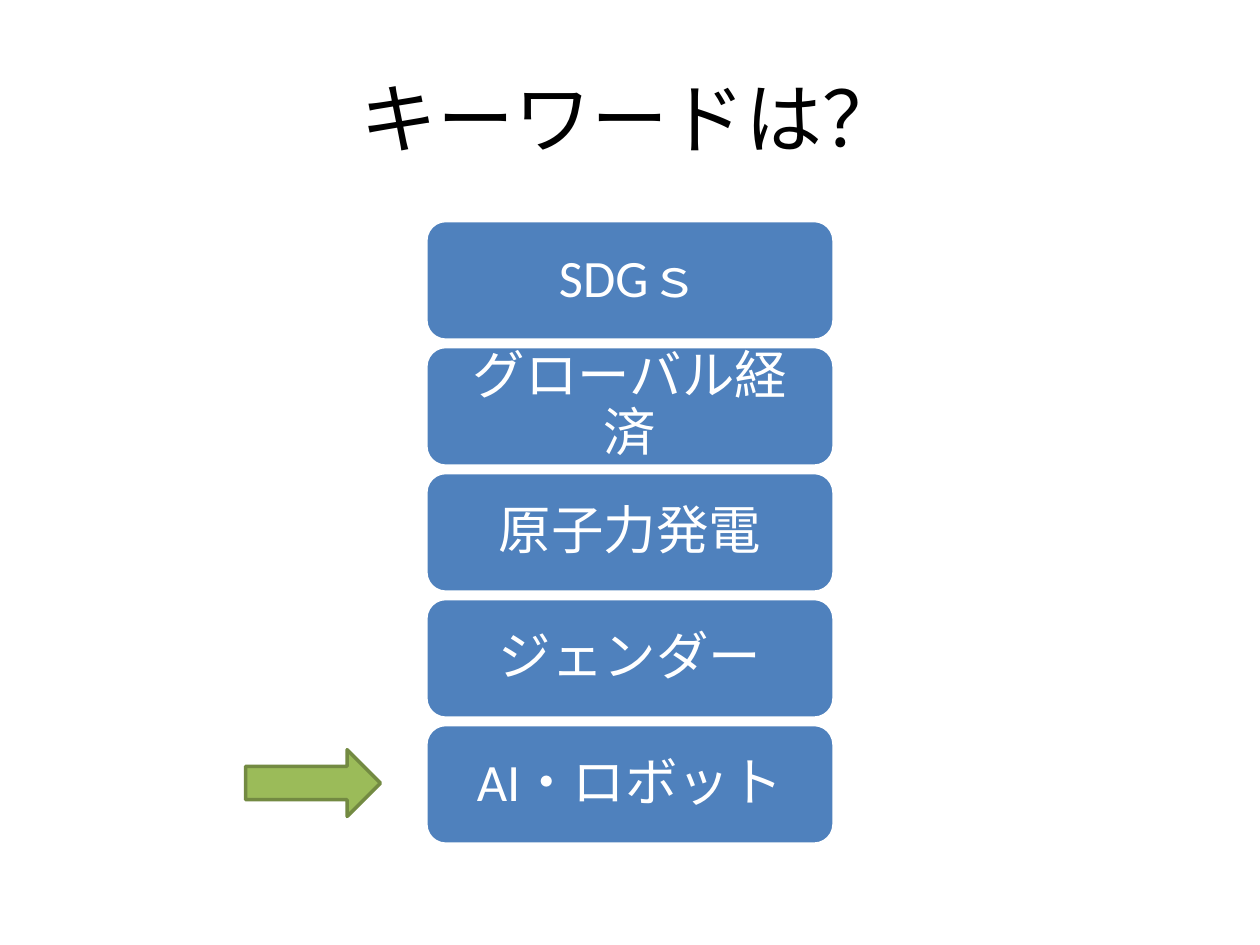
from dataclasses import dataclass

from pptx import Presentation
from pptx.dml.color import RGBColor
from pptx.enum.shapes import MSO_SHAPE
from pptx.enum.text import MSO_ANCHOR, PP_ALIGN
from pptx.util import Inches, Pt

ROUNDED = MSO_SHAPE.ROUNDED_RECTANGLE
ARROW = MSO_SHAPE.RIGHT_ARROW
MIDDLE = MSO_ANCHOR.MIDDLE
CENTER = PP_ALIGN.CENTER

FONT = "Calibri"
KEYWORDS = ("SDGｓ", "グローバル経済", "原子力発電", "ジェンダー", "AI・ロボット")
FIRST_TOP = 1.75
PITCH = 1.0


@dataclass(frozen=True)
class Area:
    """A rectangle on the slide, in inches."""

    left: float
    top: float
    width: float
    height: float

    def lengths(self) -> list:
        """Return the four measures as lengths."""
        return [Inches(side) for side in (self.left, self.top, self.width, self.height)]


@dataclass(frozen=True)
class TextStyle:
    """The look of one centred line of text."""

    size: float
    color: str
    spacing: float
    inset_x: float
    inset_y: float


TITLE_STYLE = TextStyle(44, "000000", 1.0, 0.1, 0.05)
KEYWORD_STYLE = TextStyle(30, "FFFFFF", 0.9, 0.12, 0.06)


def color_of(value: str) -> RGBColor:
    """Turn a hex string into a colour."""
    return RGBColor.from_string(value)


def apply_format(target, values: dict) -> None:
    """Set each named attribute on the target."""
    for name, value in values.items():
        setattr(target, name, value)


def write_text(box, text: str, style: TextStyle) -> None:
    """Write centred text into a box."""
    frame = box.text_frame
    apply_format(frame, {
        "word_wrap": True,
        "vertical_anchor": MIDDLE,
        "margin_left": Inches(style.inset_x),
        "margin_right": Inches(style.inset_x),
        "margin_top": Inches(style.inset_y),
        "margin_bottom": Inches(style.inset_y),
    })
    para = frame.paragraphs[0]
    apply_format(para, {"alignment": CENTER, "line_spacing": style.spacing})
    span = para.add_run()
    span.text = text
    apply_format(span.font, {"name": FONT, "size": Pt(style.size)})
    span.font.color.rgb = color_of(style.color)


def draw_shape(page, kind, area: Area, fill: str, line: str):
    """Draw a filled, outlined shape without a shadow."""
    shape = page.shapes.add_shape(kind, *area.lengths())
    shape.shadow.inherit = False
    shape.fill.solid()
    shape.fill.fore_color.rgb = color_of(fill)
    shape.line.color.rgb = color_of(line)
    shape.line.width = Pt(2)
    return shape


def main() -> None:
    """Build the keyword slide and save it."""
    deck = Presentation()
    apply_format(deck, {"slide_width": Inches(10), "slide_height": Inches(7.5)})
    page = deck.slides.add_slide(deck.slide_layouts[6])

    title = page.shapes.add_textbox(*Area(0.5, 0.3, 9, 1.25).lengths())
    write_text(title, "キーワードは？", TITLE_STYLE)

    for index, keyword in enumerate(KEYWORDS):
        area = Area(3.38, FIRST_TOP + index * PITCH, 3.24, 0.95)
        card = draw_shape(page, ROUNDED, area, "4F81BD", "FFFFFF")
        write_text(card, keyword, KEYWORD_STYLE)

    draw_shape(page, ARROW, Area(1.95, 5.95, 1.07, 0.53), "9BBB59", "738A42")
    deck.save("out.pptx")


if __name__ == "__main__":
    main()
